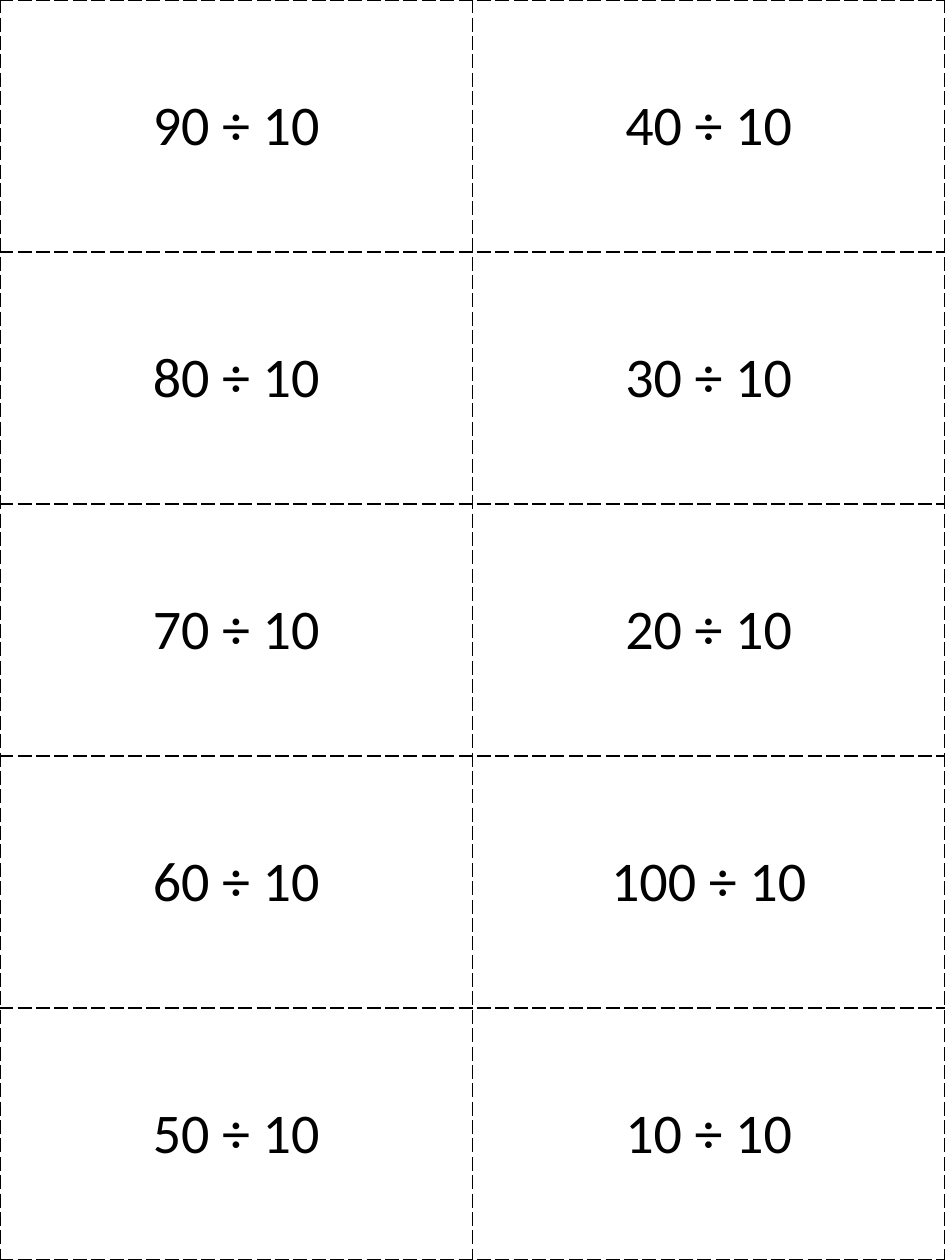
"""Build a sheet of division flash cards, two across and five down."""
from dataclasses import dataclass

from lxml import etree
from pptx import Presentation
from pptx.dml.color import RGBColor
from pptx.enum.text import MSO_ANCHOR, PP_ALIGN
from pptx.oxml.ns import qn
from pptx.util import Inches, Pt

MIDDLE = MSO_ANCHOR.MIDDLE
CENTER = PP_ALIGN.CENTER
COLORS = {"ink": "000000"}
FONT = "Calibri"
SIZE = Pt(32)
WIDTH, HEIGHT = Inches(7.5), Inches(10)
COLS, ROWS = 2, 5
LEFT = (90, 80, 70, 60, 50)
RIGHT = (40, 30, 20, 100, 10)


@dataclass(frozen=True)
class Card:
    row: int
    col: int
    value: int

    @property
    def text(self) -> str:
        return f"{self.value} ÷ 10"


def add_edges(cell) -> None:
    """Give a cell a dashed line on all four sides."""
    props = cell._tc.get_or_add_tcPr()
    for side in ("lnL", "lnR", "lnT", "lnB"):
        line = etree.SubElement(props, qn(f"a:{side}"), w=str(Pt(1)))
        fill = etree.SubElement(line, qn("a:solidFill"))
        etree.SubElement(fill, qn("a:srgbClr"), val=COLORS["ink"])
        etree.SubElement(line, qn("a:prstDash"), val="lgDash")


def draw_card(table, card: Card) -> None:
    """Write one problem into its cell."""
    cell = table.cell(card.row, card.col)
    add_edges(cell)
    cell.fill.background()
    cell.vertical_anchor = MIDDLE
    para = cell.text_frame.paragraphs[0]
    para.text = card.text
    para.alignment = CENTER
    font = para.runs[0].font
    font.name, font.size = FONT, SIZE
    font.color.rgb = RGBColor.from_string(COLORS["ink"])


def main() -> None:
    """Lay out the grid and save the deck."""
    deck = Presentation()
    deck.slide_width, deck.slide_height = WIDTH, HEIGHT
    slide = deck.slides.add_slide(deck.slide_layouts[6])
    table = slide.shapes.add_table(ROWS, COLS, 0, 0, WIDTH, HEIGHT).table
    table.first_row = table.horz_banding = False
    for col, values in enumerate((LEFT, RIGHT)):
        for row, value in enumerate(values):
            draw_card(table, Card(row, col, value))
    deck.save("out.pptx")


if __name__ == "__main__":
    main()
